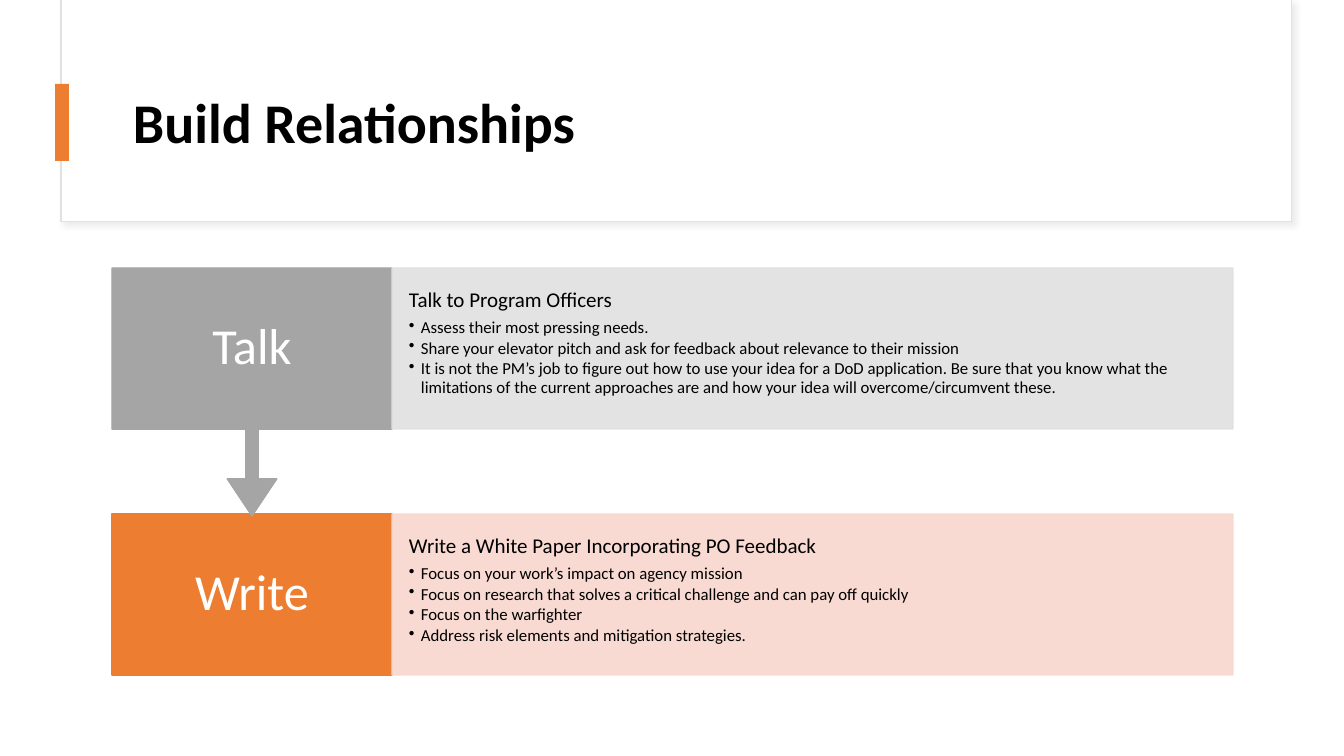
import pptx
import pptx.util
import pptx.dml.color
import pptx.enum.shapes
import pptx.enum.text
import pptx.oxml
import pptx.oxml.ns
from dataclasses import dataclass
from lxml import etree

SHAPE = pptx.enum.shapes.MSO_SHAPE
ALIGN = pptx.enum.text.PP_ALIGN
ANCHOR = pptx.enum.text.MSO_ANCHOR
qn = pptx.oxml.ns.qn


@dataclass(frozen=True)
class Theme:
    font: str = "Calibri"
    white: str = "FFFFFF"
    black: str = "000000"
    orange: str = "ED7D31"
    orange_tint: str = "F8D7CE"
    gray: str = "A5A5A5"
    gray_tint: str = "E1E1E1"
    shadow: str = "D9D9D9"
    title: int = 40
    label: int = 36
    heading: int = 15
    bullet: int = 12


THEME = Theme()
SLIDE_W, SLIDE_H = 1344, 756

STEPS = [
    ("Talk", THEME.gray, THEME.gray_tint, "Talk to Program Officers", [
        "Assess their most pressing needs.",
        "Share your elevator pitch and ask for feedback about relevance to their mission",
        "It is not the PM’s job to figure out how to use your idea for a DoD application. "
        "Be sure that you know what the limitations of the current approaches are and how "
        "your idea will overcome/circumvent these.",
    ]),
    ("Write", THEME.orange, THEME.orange_tint, "Write a White Paper Incorporating PO Feedback", [
        "Focus on your work’s impact on agency mission",
        "Focus on research that solves a critical challenge and can pay off quickly",
        "Focus on the warfighter",
        "Address risk elements and mitigation strategies.",
    ]),
]


def px(n):
    return pptx.util.Emu(round(n * 914400 / 100.8))


def rgb(color):
    return pptx.dml.color.RGBColor.from_string(color)


def set_alpha(fill, percent):
    for clr in fill.iter(qn("a:srgbClr")):
        etree.SubElement(clr, qn("a:alpha"), val=str(percent * 1000))


def add_block(s, kind, box, color, line=None, line_width=1, alpha=None):
    sp = s.shapes.add_shape(kind, *map(px, box))
    sp.shadow.inherit = False
    sp.fill.solid()
    sp.fill.fore_color.rgb = rgb(color)
    if line:
        sp.line.color.rgb = rgb(line)
        sp.line.width = pptx.util.Pt(line_width)
    else:
        sp.line.fill.background()
    if alpha:
        set_alpha(sp.fill._xPr, alpha)
    return sp


def add_shadow(sp):
    effects = sp._element.spPr.find(qn("a:effectLst"))
    shadow = etree.SubElement(effects, qn("a:outerShdw"), blurRad="50800", dist="38100",
                              dir="2700000", algn="tl", rotWithShape="0")
    clr = etree.SubElement(shadow, qn("a:srgbClr"), val=THEME.shadow)
    etree.SubElement(clr, qn("a:alpha"), val="50000")


def set_frame(sp, anchor, inset_x, inset_y):
    tf = sp.text_frame
    tf.word_wrap = True
    tf.vertical_anchor = anchor
    tf.margin_left = tf.margin_right = px(inset_x)
    tf.margin_top = tf.margin_bottom = px(inset_y)
    return tf


def write(p, text, size, color, bold=False, align=ALIGN.LEFT, after=0):
    p.text = text
    p.alignment = align
    p.line_spacing = 0.9
    p.space_after = pptx.util.Pt(after)
    font = p.runs[0].font
    font.name = THEME.font
    font.size = pptx.util.Pt(size)
    font.bold = bold
    font.color.rgb = rgb(color)


def add_bullet(p):
    pPr = p._p.get_or_add_pPr()
    pPr.set("marL", str(px(12)))
    pPr.set("indent", str(px(-12)))
    etree.SubElement(pPr, qn("a:buChar"), char="•")


def header(s, x, y, w, h):
    # Card with a soft shadow
    card = add_block(s, SHAPE.RECTANGLE, (x, y, w, h), THEME.white, THEME.gray_tint, 0.75)
    add_shadow(card)
    # Title
    title = s.shapes.add_textbox(px(x + 62), px(y + 60), px(w - 110), px(130))
    tf = set_frame(title, ANCHOR.MIDDLE, 10, 5)
    write(tf.paragraphs[0], "Build Relationships", THEME.title, THEME.black, bold=True)
    # Accent bar across the card's left edge
    add_block(s, SHAPE.RECTANGLE, (x - 6, y + 84, 14, 77), THEME.orange)


def step_row(s, x, y, w, h, step, arrow=0):
    label, color, tint, heading, bullets = step
    label_w = w // 4
    # Label block, extended by a downward arrow when another step follows
    if arrow:
        callout = add_block(s, SHAPE.UP_ARROW_CALLOUT, (x, y, label_w, h + arrow), color, color)
        callout.rotation = 180
        for i, value in enumerate((0.05, 0.1, 0.15, 0.65)):
            callout.adjustments[i] = value
        sp = s.shapes.add_textbox(px(x), px(y), px(label_w), px(h))
    else:
        sp = add_block(s, SHAPE.RECTANGLE, (x, y, label_w, h), color, color)
    tf = set_frame(sp, ANCHOR.MIDDLE, 20, 28)
    write(tf.paragraphs[0], label, THEME.label, THEME.white, align=ALIGN.CENTER)

    # Detail panel
    panel = add_block(s, SHAPE.RECTANGLE, (x + label_w, y, w - label_w, h), tint, tint, alpha=90)
    tf = set_frame(panel, ANCHOR.TOP, 17, 21)
    write(tf.paragraphs[0], heading, THEME.heading, THEME.black, after=5.25)
    for text in bullets:
        p = tf.add_paragraph()
        add_bullet(p)
        write(p, text, THEME.bullet, THEME.black, after=1.8)


def process(s, x, y, w, row_h, pitch):
    # Last step first, so each arrow tip lies over the step below
    for i in reversed(range(len(STEPS))):
        arrow = pitch - row_h + 2 if i < len(STEPS) - 1 else 0
        step_row(s, x, y + i * pitch, w, row_h, STEPS[i], arrow)


def main():
    prs = pptx.Presentation()
    prs.slide_width, prs.slide_height = px(SLIDE_W), px(SLIDE_H)
    s = prs.slides.add_slide(prs.slide_layouts[6])
    header(s, 61, 0, 1231, 222)
    process(s, 112, 268, 1121, 161, 246)
    prs.save("out.pptx")


if __name__ == "__main__":
    main()
